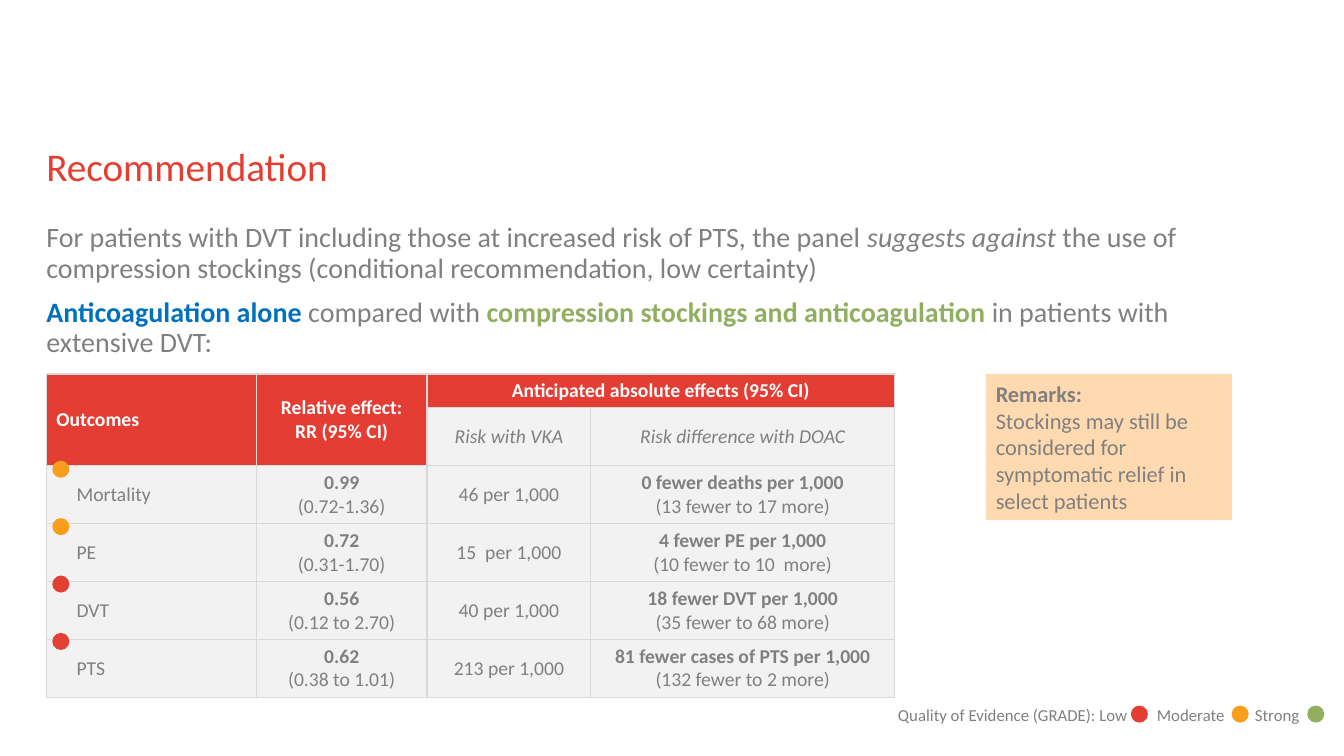
from lxml import etree
from pptx import Presentation
from pptx.dml.color import RGBColor
from pptx.enum.shapes import MSO_SHAPE
from pptx.enum.text import MSO_ANCHOR, PP_ALIGN
from pptx.oxml import parse_xml
from pptx.oxml.ns import nsdecls, qn
from pptx.util import Pt

RECT, OVAL = MSO_SHAPE.RECTANGLE, MSO_SHAPE.OVAL
MIDDLE = MSO_ANCHOR.MIDDLE
LEFT, CENTER = PP_ALIGN.LEFT, PP_ALIGN.CENTER
FONT = "Calibri"
DOT = 12.2
COLORS = {
    "title": "E53E31", "head": "E43D33", "cell": "F2F2F2", "rule": "D9D9D9",
    "text": "808080", "white": "FFFFFF", "blue": "0070C0", "lime": "91AF61",
    "note": "FFD9B0", "low": "E43E32", "mid": "F99D1C", "high": "91AF5F",
    "weak": "E14033",
}
COLS = [150, 122, 117, 217]
ROWS = [24] + [41.4] * 5
OUTCOMES = [
    ("Mortality", "0.99", "(0.72-1.36)", "46 per 1,000",
     "0 fewer deaths per 1,000", "(13 fewer to 17 more)", "mid"),
    ("PE", "0.72", "(0.31-1.70)", "15  per 1,000",
     "4 fewer PE per 1,000", "(10 fewer to 10  more)", "mid"),
    ("DVT", "0.56", "(0.12 to 2.70)", "40 per 1,000",
     "18 fewer DVT per 1,000", "(35 fewer to 68 more)", "weak"),
    ("PTS", "0.62", "(0.38 to 1.01)", "213 per 1,000",
     "81 fewer cases of PTS per 1,000", "(132 fewer to 2 more)", "weak"),
]


def rgb(name):
    return RGBColor.from_string(COLORS[name])


def style(font, size, color="text", bold=False, italic=False):
    font.name, font.size = FONT, Pt(size)
    font.bold, font.italic = bold, italic
    font.color.rgb = rgb(color)


def add_box(shapes, left, top, width, height, inset=True):
    """Add a wrapping text box and return its text frame."""
    frame = shapes.add_textbox(Pt(left), Pt(top), Pt(width), Pt(height)).text_frame
    frame.word_wrap = True
    if not inset:
        frame.margin_left = frame.margin_right = 0
        frame.margin_top = frame.margin_bottom = 0
    return frame


def add_solid(shapes, kind, left, top, width, height, color):
    shape = shapes.add_shape(kind, Pt(left), Pt(top), Pt(width), Pt(height))
    shape.shadow.inherit = False
    shape.fill.solid()
    shape.fill.fore_color.rgb = rgb(color)
    shape.line.fill.background()
    return shape


def add_dot(shapes, left, top, color):
    add_solid(shapes, OVAL, left, top, DOT, DOT, color)


def add_title(shapes, left, top, width, height):
    frame = add_box(shapes, left, top, width, height, inset=False)
    frame.text = "Recommendation"
    para = frame.paragraphs[0]
    para.line_spacing = 0.9
    style(para.runs[0].font, 28, "title")


def add_body(shapes, left, top, width, height):
    frame = add_box(shapes, left, top, width, height, inset=False)
    texts = [
        [("For patients with DVT including those at increased risk of PTS, the panel ",
          "text", False, False),
         ("suggests against", "text", False, True),
         (" the use of compression stockings (conditional recommendation, "
          "low certainty)", "text", False, False)],
        [("Anticoagulation alone ", "blue", True, False),
         ("compared with ", "text", False, False),
         ("compression stockings and anticoagulation ", "lime", True, False),
         ("in patients with extensive DVT:", "text", False, False)],
    ]
    for i, parts in enumerate(texts):
        para = frame.add_paragraph() if i else frame.paragraphs[0]
        para.line_spacing = 0.9
        para.space_before = Pt(10 if i else 0)
        for text, color, bold, italic in parts:
            run = para.add_run()
            run.text = text
            style(run.font, 20, color, bold, italic)


def add_rules(cell):
    """Draw a thin line on all four sides of a cell."""
    props = cell._tc.get_or_add_tcPr()
    for side in ("lnL", "lnR", "lnT", "lnB"):
        props.append(parse_xml(
            f'<a:{side} {nsdecls("a")} w="12700"><a:solidFill>'
            f'<a:srgbClr val="{COLORS["rule"]}"/></a:solidFill></a:{side}>'))


def fill_cell(cell, lines, align=CENTER, color="text", bold=False, italic=False):
    """Write lines; a second line in a body cell makes the first one bold."""
    cell.text = "\n".join(lines)
    for i, para in enumerate(cell.text_frame.paragraphs):
        para.alignment = align
        strong = bold or (len(lines) > 1 and i == 0)
        style(para.runs[0].font, 14, color, strong, italic)


def add_effects(shapes, left, top):
    """Add the outcome table with a certainty dot beside each outcome."""
    table = shapes.add_table(len(ROWS), len(COLS), Pt(left), Pt(top),
                             Pt(sum(COLS)), Pt(sum(ROWS))).table
    table.first_row = table.horz_banding = False
    for col, width in zip(table.columns, COLS):
        col.width = Pt(width)
    for r, height in enumerate(ROWS):
        table.rows[r].height = Pt(height)
        for c in range(len(COLS)):
            cell = table.cell(r, c)
            cell.vertical_anchor = MIDDLE
            add_rules(cell)
            head = r == 0 or (r == 1 and c < 2)
            cell.fill.solid()
            cell.fill.fore_color.rgb = rgb("head" if head else "cell")
    for first, last in (((0, 0), (1, 0)), ((0, 1), (1, 1)), ((0, 2), (0, 3))):
        table.cell(*first).merge(table.cell(*last))

    heads = [["Outcomes"], ["Relative effect:", "RR (95% CI)"],
             ["Anticipated absolute effects (95% CI)"]]
    for c, lines in enumerate(heads):
        fill_cell(table.cell(0, c), lines, CENTER if c else LEFT, "white", True)
    for c, text in enumerate(["Risk with VKA", "Risk difference with DOAC"], 2):
        fill_cell(table.cell(1, c), [text], italic=True)

    for i, (name, ratio, span, risk, change, limits, grade) in enumerate(OUTCOMES):
        cells = table.rows[i + 2].cells
        cells[0].margin_left = Pt(21.6)
        fill_cell(cells[0], [name], LEFT)
        fill_cell(cells[1], [ratio, span])
        fill_cell(cells[2], [risk])
        fill_cell(cells[3], [change, limits])
        add_dot(shapes, left + 4.3, top + 62 + 41 * i, grade)


def add_remarks(shapes, left, top, width, height):
    box = add_solid(shapes, RECT, left, top, width, height, "note")
    frame = box.text_frame
    frame.word_wrap = True
    frame.vertical_anchor = MIDDLE
    frame.text = ("Remarks:\nStockings may still be considered for "
                  "symptomatic relief in select patients")
    for i, para in enumerate(frame.paragraphs):
        para.alignment = LEFT
        style(para.runs[0].font, 16, bold=i == 0)


def add_legend(shapes, left, top, width, height):
    group = shapes.add_group_shape().shapes
    frame = add_box(group, left, top, width, height)
    para = frame.paragraphs[0]
    tabs = etree.SubElement(para._p.get_or_add_pPr(), qn("a:tabLst"))
    for stop in (185, 255):
        etree.SubElement(tabs, qn("a:tab"), pos=str(Pt(stop)), algn="l")
    para.text = "Quality of Evidence (GRADE): Low\tModerate\tStrong"
    for run in para.runs:
        style(run.font, 12)
    for x, color in ((173.5, "low"), (245.5, "mid"), (299.5, "high")):
        add_dot(group, left + x, top + 4.3, color)


def main():
    deck = Presentation()
    deck.slide_width, deck.slide_height = Pt(960), Pt(540)
    shapes = deck.slides.add_slide(deck.slide_layouts[6]).shapes
    left, top = 33.1, 267.1
    add_title(shapes, left, 105.8, 864, 33.1)
    add_body(shapes, left, 159.8, 864, 124.6)
    add_effects(shapes, left, top)
    add_remarks(shapes, 704.2, top, 175.7, 104.4)
    add_legend(shapes, 634.3, 499.7, 326, 21.6)
    deck.save("out.pptx")


if __name__ == "__main__":
    main()
